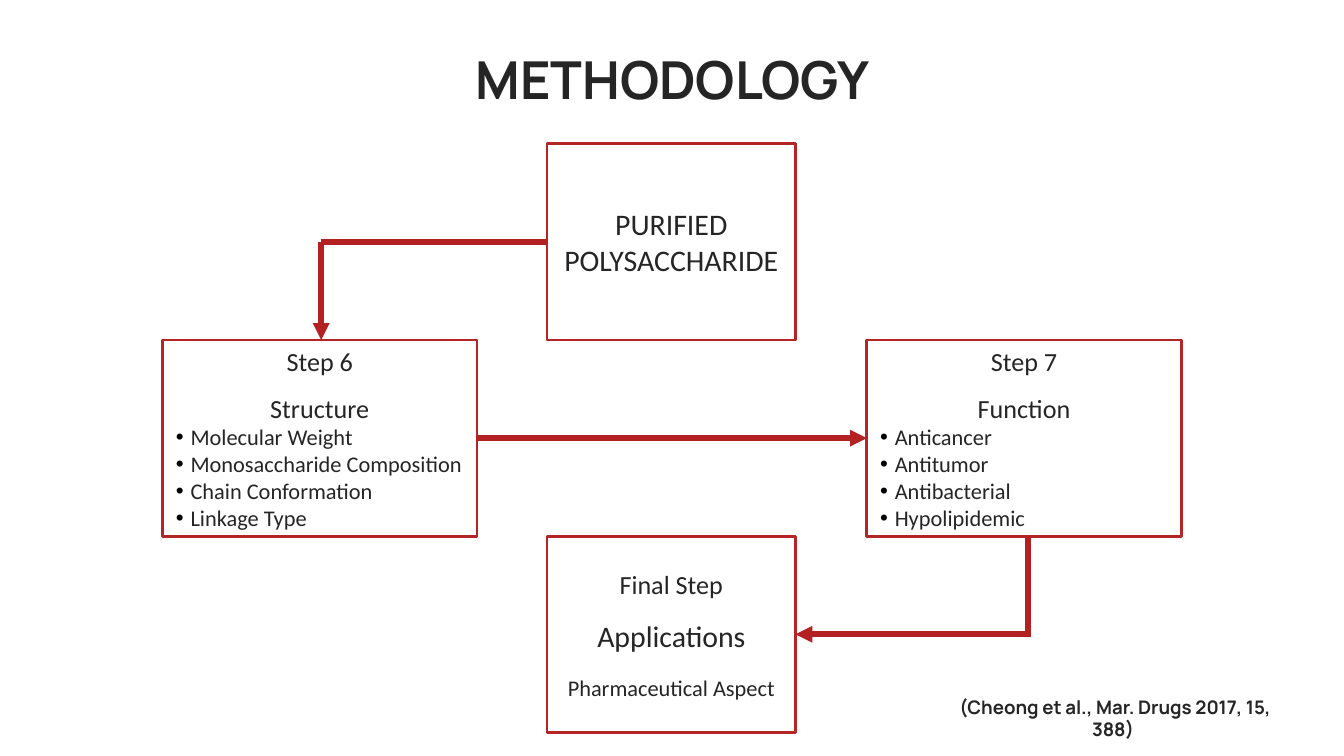
from lxml import etree
from pptx import Presentation
from pptx.dml.color import RGBColor
from pptx.enum.shapes import MSO_CONNECTOR, MSO_SHAPE
from pptx.enum.text import MSO_ANCHOR, MSO_AUTO_SIZE, PP_ALIGN
from pptx.oxml.ns import qn
from pptx.util import Inches, Pt

WHITE = RGBColor(0xFF, 0xFF, 0xFF)
INK = RGBColor(0x25, 0x25, 0x25)
BORDER = RGBColor(0xB4, 0x25, 0x26)
ARROW = RGBColor(0xB4, 0x21, 0x22)

BOX_H = 1.46
TOP = 1.07
ROWS = [TOP + i * BOX_H for i in range(3)]
SIDE_W, MID_W = 2.34, 1.85
LEFT_X, MID_X, RIGHT_X = 1.21, 4.07, 6.45


class FlowSlide:
    """Holds the current slide and the style of its elements."""

    body_font = "Calibri"
    heading_font = "Manrope"

    def __init__(self, prs):
        self.slide = prs.slides.add_slide(prs.slide_layouts[5])
        self.shapes = self.slide.shapes

    def format_runs(self, p, font, size, bold=False):
        for r in p.runs:
            r.font.name = font
            r.font.size = Pt(size)
            r.font.bold = bold
            r.font.color.rgb = INK

    def heading(self, sp, text, size, x, y, w, h):
        sp.left, sp.top, sp.width, sp.height = map(Inches, (x, y, w, h))
        tf = sp.text_frame
        tf.text = text
        tf.word_wrap = True
        tf.auto_size = MSO_AUTO_SIZE.NONE
        tf.vertical_anchor = MSO_ANCHOR.BOTTOM
        tf.margin_left = tf.margin_right = Inches(0.1)
        tf.margin_top = tf.margin_bottom = Inches(0.1)
        p = tf.paragraphs[0]
        p.alignment = PP_ALIGN.CENTER
        self.format_runs(p, self.heading_font, size, bold=True)

    def title(self, text, *box):
        self.heading(self.shapes.title, text, 28, *box)

    def citation(self, text, *box):
        sp = self.shapes.add_textbox(*map(Inches, box))
        self.heading(sp, text, 10, *box)

    def box(self, x, y, w, lines, bullets=()):
        """Lines are (text, size, line spacing, points before)."""
        sp = self.shapes.add_shape(
            MSO_SHAPE.RECTANGLE, Inches(x), Inches(y), Inches(w), Inches(BOX_H))
        sp.shadow.inherit = False
        sp.fill.solid()
        sp.fill.fore_color.rgb = WHITE
        sp.line.color.rgb = BORDER
        sp.line.width = Pt(1.5)
        tf = sp.text_frame
        tf.word_wrap = True
        tf.vertical_anchor = MSO_ANCHOR.MIDDLE
        tf.text = "\n".join([line[0] for line in lines] + list(bullets))
        for p, (_, size, spacing, before) in zip(tf.paragraphs, lines):
            p.alignment = PP_ALIGN.CENTER
            p.line_spacing = spacing
            if before:
                p.space_before = Pt(before)
            self.format_runs(p, self.body_font, size)
        for p in tf.paragraphs[len(lines):]:
            p.alignment = PP_ALIGN.LEFT
            self.bullet(p)
            self.format_runs(p, self.body_font, 12)

    def bullet(self, p):
        pPr = p._p.get_or_add_pPr()
        pPr.set("marL", str(Inches(0.11)))
        pPr.set("indent", str(-Inches(0.11)))
        color = etree.SubElement(pPr, qn("a:buClr"))
        etree.SubElement(color, qn("a:srgbClr"), val="000000")
        etree.SubElement(pPr, qn("a:buFont"), typeface="Arial")
        etree.SubElement(pPr, qn("a:buChar"), char="•")

    def line(self, x1, y1, x2, y2, arrow=False):
        cn = self.shapes.add_connector(
            MSO_CONNECTOR.STRAIGHT, *map(Inches, (x1, y1, x2, y2)))
        cn.line.color.rgb = ARROW
        cn.line.width = Pt(3)
        if arrow:
            etree.SubElement(cn.line._get_or_add_ln(), qn("a:tailEnd"), type="triangle")
        etree.SubElement(cn._element.spPr, qn("a:effectLst"))


def main():
    # Widescreen page, 16:9
    prs = Presentation()
    prs.slide_width = Inches(10)
    prs.slide_height = Inches(10) * 9 // 16
    s = FlowSlide(prs)
    s.title("METHODOLOGY", 2.39, 0.22, 5.23, 0.7)

    # Side boxes: a step, its subject and a list
    for x, step, subject, items in [
        (LEFT_X, "Step 6", "Structure",
         ["Molecular Weight", "Monosaccharide Composition",
          "Chain Conformation", "Linkage Type"]),
        (RIGHT_X, "Step 7", "Function",
         ["Anticancer", "Antitumor", "Antibacterial", "Hypolipidemic"]),
    ]:
        s.box(x, ROWS[1], SIDE_W, [(step, 14, 1, 0), (subject, 14, 1.5, 0)], items)

    # Middle boxes: start and end of the flow
    s.box(MID_X, ROWS[0], MID_W, [("PURIFIED POLYSACCHARIDE", 16, 1, 0)])
    s.box(MID_X, ROWS[2], MID_W, [
        ("Final Step", 14, 1, 0),
        ("Applications", 16, 1.5, 0),
        ("Pharmaceutical Aspect", 12, 1, 11),
    ])

    # Arrows between the boxes
    start_y, middle_y, end_y = [y + BOX_H / 2 for y in ROWS]
    down_x, back_x = 2.39, 7.65
    s.line(down_x, start_y, down_x, ROWS[1], arrow=True)
    s.line(down_x, start_y, MID_X, start_y)
    s.line(LEFT_X + SIDE_W, middle_y, RIGHT_X, middle_y, arrow=True)
    s.line(back_x, end_y, MID_X + MID_W, end_y, arrow=True)
    s.line(back_x, end_y + 0.02, back_x, ROWS[2])

    # Source of the method
    s.citation("(Cheong et al., Mar. Drugs 2017, 15, 388) ", 6.87, 5.2, 2.85, 0.41)
    prs.save("out.pptx")


if __name__ == "__main__":
    main()
